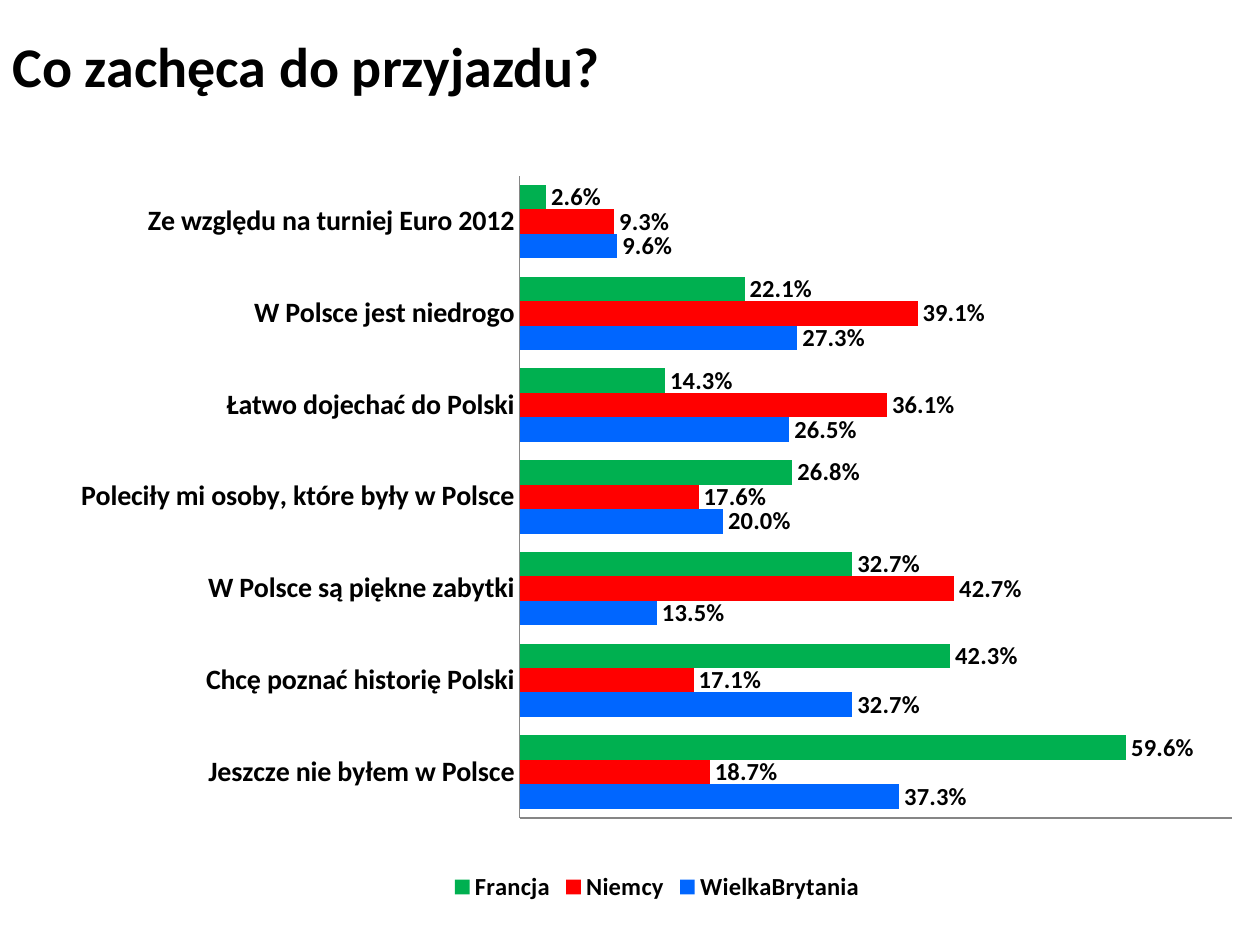
from pptx import Presentation
from pptx.chart.data import CategoryChartData
from pptx.dml.color import RGBColor
from pptx.enum.chart import XL_CHART_TYPE as Kind, XL_LABEL_POSITION as Spot
from pptx.enum.chart import XL_LEGEND_POSITION as Side, XL_TICK_LABEL_POSITION as Labels
from pptx.enum.chart import XL_TICK_MARK as Tick
from pptx.enum.text import MSO_ANCHOR as Anchor, PP_ALIGN as Align
from pptx.oxml import parse_xml
from pptx.oxml.ns import nsdecls
from pptx.util import Inches, Pt

# Content
TITLE = "Co zachęca do przyjazdu?"
REASONS = [
    "Jeszcze nie byłem w Polsce",
    "Chcę poznać historię Polski",
    "W Polsce są piękne zabytki",
    "Poleciły mi osoby, które były w Polsce",
    "Łatwo dojechać do Polski",
    "W Polsce jest niedrogo",
    "Ze względu na turniej Euro 2012",
]
SERIES = [
    ("WielkaBrytania", "0066FF", (0.373, 0.327, 0.135, 0.2, 0.265, 0.273, 0.096)),
    ("Niemcy", "FF0000", (0.187, 0.171, 0.427, 0.176, 0.361, 0.391, 0.093)),
    ("Francja", "00B050", (0.596, 0.423, 0.327, 0.268, 0.143, 0.221, 0.026)),
]
PERCENT = "####.0%"
PLOT = {"x": 0.386, "y": 0, "w": 0.591, "h": 0.878}


def paint(color, code):
    color.rgb = RGBColor.from_string(code)


def style(font, size, bold=True):
    font.name, font.size, font.bold = "Calibri", Pt(size), bold
    paint(font.color, "000000")


prs = Presentation()
prs.slide_width, prs.slide_height = Inches(10), Inches(7.5)
slide = prs.slides.add_slide(prs.slide_layouts[5])

# Title
title = slide.shapes.title
title.left, title.top = Inches(0), Inches(0.16)
title.width, title.height = Inches(7.05), Inches(0.72)
title.text_frame.text = TITLE
title.text_frame.vertical_anchor = Anchor.MIDDLE
head = title.text_frame.paragraphs[0]
head.alignment = Align.LEFT
style(head.font, 32)

# Chart
data = CategoryChartData(number_format=PERCENT)
data.categories = REASONS
for name, _, vals in SERIES:
    data.add_series(name, vals)
chart = slide.shapes.add_chart(
    Kind.BAR_CLUSTERED, Inches(0.43), Inches(1.39), Inches(9.57), Inches(5.81), data
).chart
style(chart.font, 10, False)
chart.has_title = False

# Bars and their labels
plot = chart.plots[0]
plot.gap_width = 75
plot.vary_by_categories = False
for bars, (_, code, _) in zip(plot.series, SERIES):
    bars.format.fill.solid()
    paint(bars.format.fill.fore_color, code)
    tags = bars.data_labels
    tags.show_value = True
    tags.number_format, tags.number_format_is_linked = PERCENT, False
    tags.position = Spot.OUTSIDE_END
    style(tags.font, 14)

# Axes
for axis in (chart.category_axis, chart.value_axis):
    axis.major_tick_mark = axis.minor_tick_mark = Tick.NONE
    axis.has_major_gridlines = False
    paint(axis.format.line.color, "868686")
    axis.format.line.width = Pt(0.75)
style(chart.category_axis.tick_labels.font, 16)
scale = chart.value_axis
scale.minimum_scale, scale.maximum_scale = 0, 0.7
scale.tick_label_position = Labels.NONE

# Legend
chart.has_legend = True
chart.legend.position = Side.BOTTOM
chart.legend.include_in_layout = False
style(chart.legend.font, 14)

# Fixed inner plot area
area = chart._chartSpace.chart.plotArea
for old in area.findall("{*}layout"):
    area.remove(old)
modes = '<c:xMode val="edge"/><c:yMode val="edge"/>'
sizes = "".join(f'<c:{key} val="{val}"/>' for key, val in PLOT.items())
area.insert(0, parse_xml(
    f'<c:layout {nsdecls("c")}><c:manualLayout><c:layoutTarget val="inner"/>'
    f"{modes}{sizes}</c:manualLayout></c:layout>"
))

prs.save("out.pptx")
